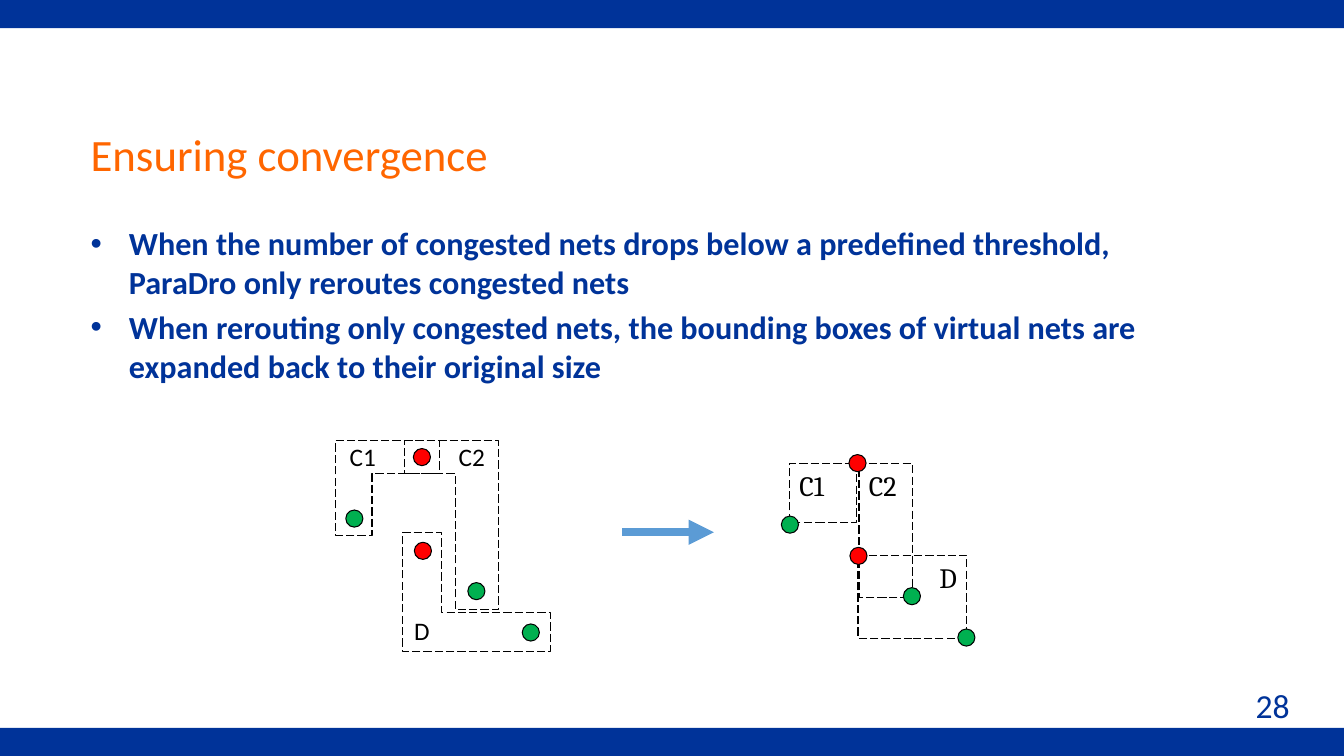
"""Build the slide on ensuring convergence of the net router."""
from dataclasses import dataclass

from lxml import etree
from pptx import Presentation
from pptx.dml.color import RGBColor
from pptx.enum.dml import MSO_LINE
from pptx.enum.shapes import MSO_CONNECTOR, MSO_SHAPE
from pptx.enum.text import MSO_ANCHOR, PP_ALIGN
from pptx.oxml.ns import qn
from pptx.util import Inches, Pt


@dataclass(frozen=True)
class Theme:
    navy: RGBColor = RGBColor(0x00, 0x33, 0x99)
    orange: RGBColor = RGBColor(0xFF, 0x66, 0x00)
    black: RGBColor = RGBColor(0x00, 0x00, 0x00)
    red: RGBColor = RGBColor(0xFF, 0x00, 0x00)
    green: RGBColor = RGBColor(0x00, 0xB0, 0x50)
    arrow: RGBColor = RGBColor(0x5B, 0x9B, 0xD5)
    font: str = "Calibri"
    box_font: str = "Cambria"
    title: int = 32
    body: int = 23
    number: int = 24
    box_label: int = 20
    region_label: int = 18


theme = Theme()


def add_text(sp, lines, size, color, font=theme.font, bold=False, align=PP_ALIGN.LEFT):
    """Fill a shape with styled paragraphs and return its text frame."""
    tf = sp.text_frame
    tf.word_wrap = True
    tf.vertical_anchor = MSO_ANCHOR.TOP
    tf.text = "\n".join(lines)
    for p in tf.paragraphs:
        p.alignment = align
        for r in p.runs:
            r.font.name, r.font.size, r.font.bold = font, Pt(size), bold
            r.font.color.rgb = color
    return tf


def outline(sp, fill=None):
    """Give a shape a thin black line, dashed when it has no fill."""
    sp.shadow.inherit = False
    sp.line.color.rgb = theme.black
    sp.line.width = Pt(0.75)
    if fill is None:
        sp.fill.background()
        sp.line.dash_style = MSO_LINE.LONG_DASH
    else:
        sp.fill.solid()
        sp.fill.fore_color.rgb = fill


prs = Presentation()
prs.slide_width, prs.slide_height = Inches(13.33), Inches(7.5)
s = prs.slides.add_slide(prs.slide_layouts[6])
shapes = s.shapes

for top in (7.22, 0):
    sp = shapes.add_shape(MSO_SHAPE.RECTANGLE, 0, Inches(top), prs.slide_width, Inches(0.28))
    sp.shadow.inherit = False
    sp.fill.solid()
    sp.fill.fore_color.rgb = theme.navy
    sp.line.fill.background()

title = shapes.add_textbox(Inches(0.8), Inches(0.9), Inches(9.51), Inches(1.25))
tf = add_text(title, ["Ensuring convergence"], theme.title, theme.orange)
tf.vertical_anchor = MSO_ANCHOR.MIDDLE

bullets = [
    "When the number of congested nets drops below a predefined threshold, "
    "ParaDro only reroutes congested nets",
    "When rerouting only congested nets, the bounding boxes of virtual nets are "
    "expanded back to their original size",
]
body = shapes.add_textbox(Inches(0.8), Inches(2.17), Inches(11.33), Inches(4.68))
tf = add_text(body, bullets, theme.body, theme.navy, bold=True)
for i, p in enumerate(tf.paragraphs):
    p.space_before = Pt(4.6 if i else 0)
    pPr = p._p.get_or_add_pPr()
    pPr.set("marL", str(Inches(0.38)))
    pPr.set("indent", str(-Inches(0.38)))
    etree.SubElement(pPr, qn("a:buFont"), typeface="Arial")
    etree.SubElement(pPr, qn("a:buChar"), char="•")

number = shapes.add_textbox(Inches(10.11), Inches(6.75), Inches(2.78), Inches(0.5))
add_text(number, ["28"], theme.number, theme.navy, align=PP_ALIGN.RIGHT)

DOT = 0.17
bounding_boxes = [
    ("C1", 7.83, 4.6, 0.67, 0.58, PP_ALIGN.LEFT),
    ("D", 8.51, 5.51, 1.08, 0.82, PP_ALIGN.RIGHT),
    ("C2", 8.52, 4.6, 0.53, 1.33, PP_ALIGN.LEFT),
]
for label, x, y, w, h, align in bounding_boxes:
    sp = shapes.add_shape(MSO_SHAPE.RECTANGLE, Inches(x), Inches(y), Inches(w), Inches(h))
    outline(sp)
    add_text(sp, [label], theme.box_label, theme.black, theme.box_font, align=align)

pins = [
    (9.5, 6.24, theme.green), (8.42, 4.51, theme.red), (7.75, 5.12, theme.green),
    (8.96, 5.83, theme.green), (8.43, 5.43, theme.red),
    (5.18, 6.19, theme.green), (4.1, 4.45, theme.red), (3.43, 5.06, theme.green),
    (4.64, 5.78, theme.green), (4.11, 5.38, theme.red),
]
for x, y, color in pins:
    sp = shapes.add_shape(MSO_SHAPE.OVAL, Inches(x), Inches(y), Inches(DOT), Inches(DOT))
    outline(sp, color)

regions = [
    [(3.33, 4.37), (4.36, 4.37), (4.36, 4.7), (3.69, 4.7), (3.69, 5.31), (3.33, 5.31)],
    [(4.01, 4.37), (4.94, 4.37), (4.94, 6.05), (4.52, 6.05), (4.52, 4.7), (4.01, 4.7)],
    [(3.99, 5.28), (4.38, 5.28), (4.38, 6.08), (5.46, 6.08), (5.46, 6.46), (3.99, 6.46)],
]
for corners in regions:
    points = [(Inches(x), Inches(y)) for x, y in corners]
    builder = shapes.build_freeform(*points[0])
    builder.add_line_segments(points[1:], close=True)
    outline(builder.convert_to_shape())

for label, x, y in [("D", 4.01, 6.05), ("C1", 3.37, 4.33), ("C2", 4.45, 4.33)]:
    sp = shapes.add_textbox(Inches(x), Inches(y), Inches(0.52), Inches(0.42))
    add_text(sp, [label], theme.region_label, theme.black)

arrow = shapes.add_connector(
    MSO_CONNECTOR.STRAIGHT, Inches(6.17), Inches(5.28), Inches(7.08), Inches(5.28))
arrow.line.color.rgb = theme.arrow
arrow.line.width = Pt(6)
etree.SubElement(arrow.line._get_or_add_ln(), qn("a:tailEnd"), type="triangle")
etree.SubElement(arrow._element.spPr, qn("a:effectLst"))

prs.save("out.pptx")
